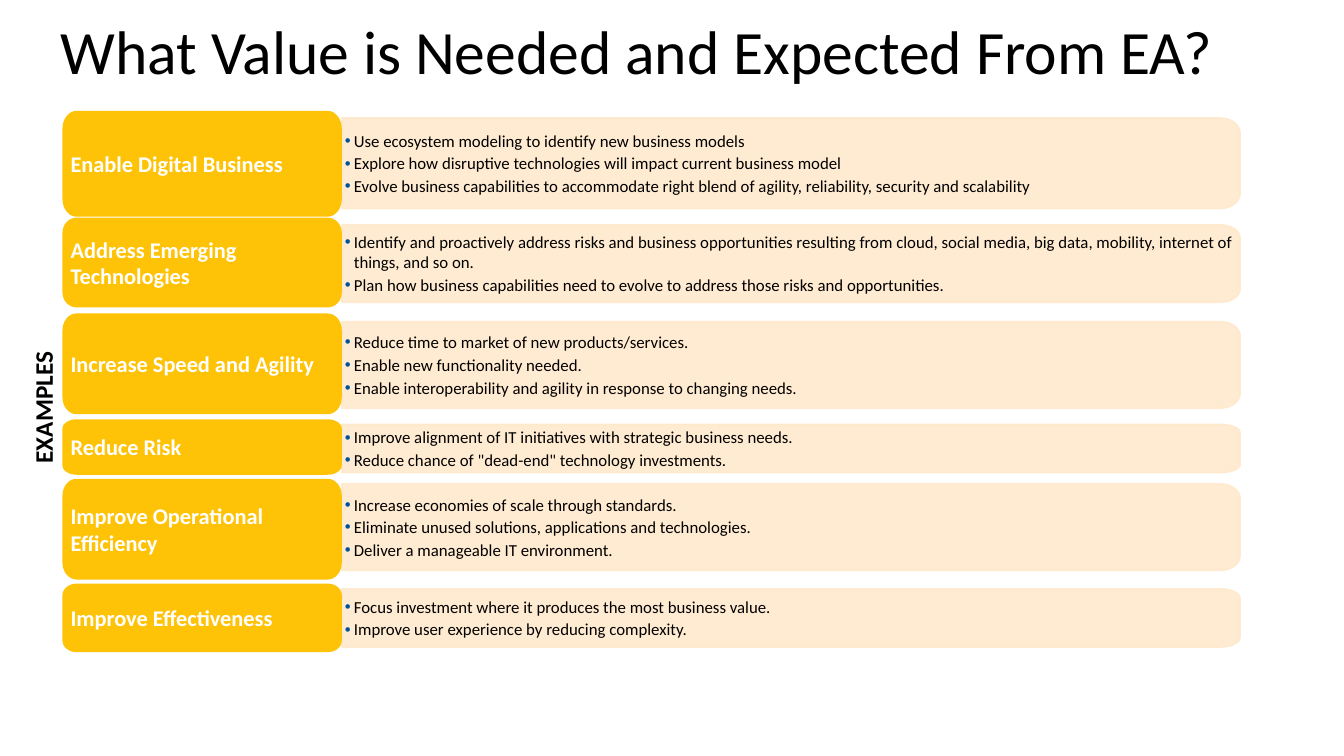
from math import cos, pi, sin

from lxml.etree import SubElement as Sub
from pptx import Presentation
from pptx.dml.color import RGBColor
from pptx.enum.text import MSO_ANCHOR as Anchor, MSO_AUTO_SIZE as Auto, PP_ALIGN as Align
from pptx.oxml.ns import qn
from pptx.util import Inches, Pt

TITLE = "What Value is Needed and Expected From EA?"
SIDE = "EXAMPLES"
# label, label top and height, panel top and height, bullets
ROWS = [
    ("Enable Digital Business", 1.1, 1.05, 1.17, 0.9, [
        "Use ecosystem modeling to identify new business models",
        "Explore how disruptive technologies will impact current business model",
        "Evolve business capabilities to accommodate right blend of agility, "
        "reliability, security and scalability"]),
    ("Address Emerging Technologies", 2.16, 0.89, 2.23, 0.77, [
        "Identify and proactively address risks and business opportunities resulting "
        "from cloud, social media, big data, mobility, internet of things, and so on.",
        "Plan how business capabilities need to evolve to address those risks "
        "and opportunities."]),
    ("Increase Speed and Agility", 3.11, 1, 3.19, 0.86, [
        "Reduce time to market of new products/services.",
        "Enable new functionality needed.",
        "Enable interoperability and agility in response to changing needs."]),
    ("Reduce Risk", 4.16, 0.55, 4.21, 0.48, [
        "Improve alignment of IT initiatives with strategic business needs.",
        'Reduce chance of "dead-end" technology investments.']),
    ("Improve Operational Efficiency", 4.75, 1, 4.8, 0.86, [
        "Increase economies of scale through standards.",
        "Eliminate unused solutions, applications and technologies.",
        "Deliver a manageable IT environment."]),
    ("Improve Effectiveness", 5.79, 0.68, 5.84, 0.58, [
        "Focus investment where it produces the most business value.",
        "Improve user experience by reducing complexity."]),
]
LEFT, SPLIT, RIGHT = 0.62, 3.39, 12.3
GOLD, CREAM, BLUE, BLACK, WHITE = "FEC306", "FFE9CC", "00529B", "000000", "FFFFFF"
STEPS = 8


def paint(color, value):
    color.rgb = RGBColor.from_string(value)


def write(par, text, size, color, bold=False):
    par.alignment = Align.LEFT
    run = par.add_run()
    run.text = text
    for name, value in {"name": "Calibri", "size": Pt(size), "bold": bold}.items():
        setattr(run.font, name, value)
    paint(run.font.color, color)


def corner(x, y, rx, ry, start):
    """Points of a quarter ellipse around x, y, clockwise from the start angle."""
    angles = [start + pi / 2 * i / STEPS for i in range(STEPS + 1)]
    return [(x + rx * cos(a), y + ry * sin(a)) for a in angles]


def block(left, top, right, high, rx, fill, both, insets):
    """Box with its right corners rounded, and its left ones too if both is set."""
    base, ry = top + high, high / 6
    points = (corner(right - rx, top + ry, rx, ry, -pi / 2)
              + corner(right - rx, base - ry, rx, ry, 0))
    if both:
        points += (corner(left + rx, base - ry, rx, ry, pi / 2)
                   + corner(left + rx, top + ry, rx, ry, pi))
    else:
        points += [(left, base), (left, top)]
    points = [(Inches(x), Inches(y)) for x, y in points]
    pen = shapes.build_freeform(*points[0])
    pen.add_line_segments(points[1:])
    shape = pen.convert_to_shape()
    shape.shadow.inherit = False
    shape.fill.solid()
    paint(shape.fill.fore_color, fill)
    shape.line.fill.background()
    frame = shape.text_frame
    across, down = insets
    for name, value in {"margin_left": Inches(across), "margin_right": 0,
                        "margin_top": Inches(down), "margin_bottom": Inches(down),
                        "word_wrap": True, "vertical_anchor": Anchor.MIDDLE}.items():
        setattr(frame, name, value)
    return shape


def bullet(par):
    props = par._p.get_or_add_pPr()
    props.set("marL", str(Inches(0.09)))
    props.set("indent", str(-Inches(0.09)))
    Sub(Sub(props, qn("a:buClr")), qn("a:srgbClr"), val=BLUE)
    Sub(props, qn("a:buFont"), typeface="Arial")
    Sub(props, qn("a:buChar"), char="•")


def panel(top, high, items):
    shape = block(SPLIT, top, RIGHT, high, 0.2, CREAM, False, (0.03, 0.05))
    shape.line.width = Pt(1)
    shape.line.fill.solid()
    paint(shape.line.color, CREAM)
    for color in list(shape._element.spPr.iter(qn("a:srgbClr"))):
        Sub(color, qn("a:alpha"), val="90000")
    frame = shape.text_frame
    for i, item in enumerate(items):
        par = frame.add_paragraph() if i else frame.paragraphs[0]
        par.level = 1
        par.space_after = Pt(1.8)
        write(par, item, 12, BLACK)
        bullet(par)


deck = Presentation()
deck.slide_width, deck.slide_height = Inches(13.33), Inches(7.5)
slide = deck.slides.add_slide(deck.slide_layouts[5])
shapes = slide.shapes

title = shapes.title
title.left, title.top, title.width, title.height = map(Inches, (0.5, 0.25, 12.33, 0.59))
title.text_frame.vertical_anchor = Anchor.MIDDLE
title.text_frame.auto_size = Auto.SHAPE_TO_FIT_TEXT
head = title.text_frame.paragraphs[0]
head.line_spacing = 0.9
write(head, TITLE, 44, BLACK)

side = shapes.add_textbox(*map(Inches, (-0.29, 3.78, 1.43, 0.4)))
side.rotation = 270
side.text_frame.word_wrap = True
write(side.text_frame.paragraphs[0], SIDE, 18, BLACK, True)

for name, top, high, inner, depth, items in ROWS:
    panel(inner, depth, items)
    label = block(LEFT, top, SPLIT, high, 0.14, GOLD, True, (0.08, 0.07))
    write(label.text_frame.paragraphs[0], name, 16, WHITE, True)

deck.save("out.pptx")
